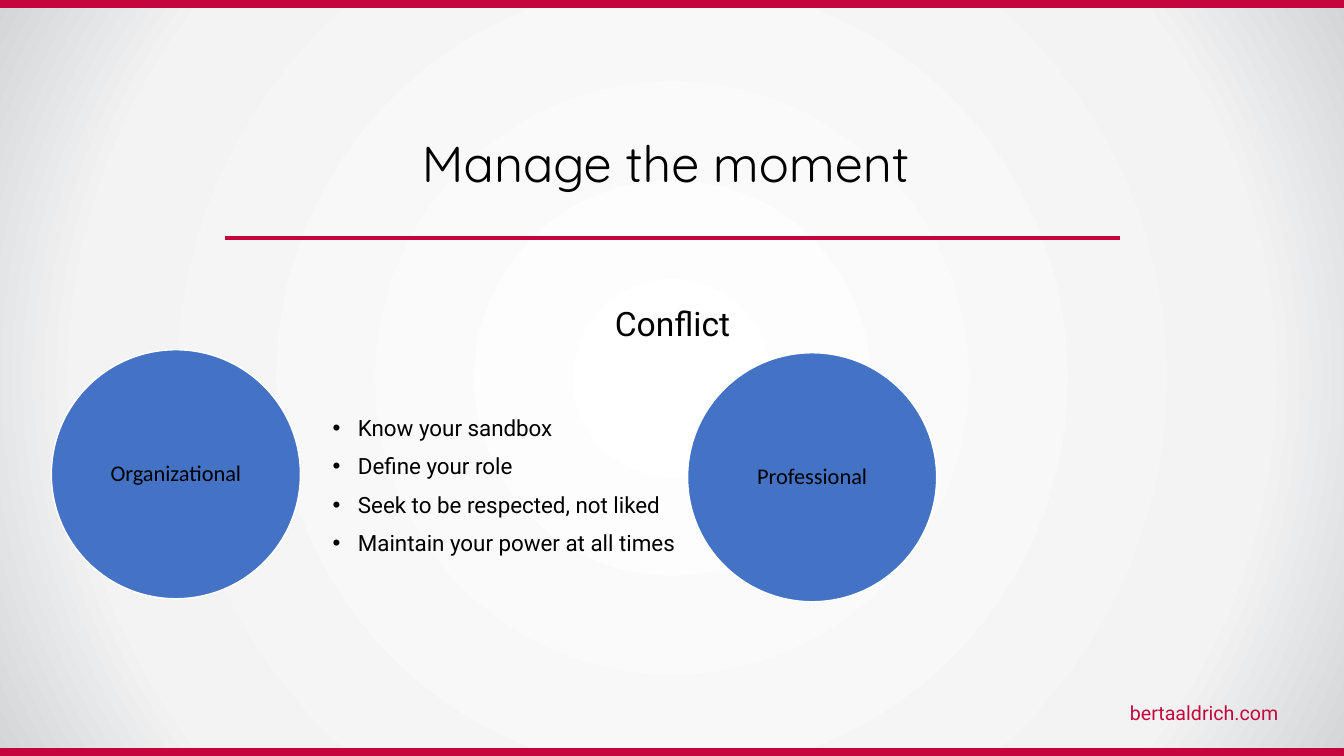
"""Build the "Manage the moment" slide."""
from lxml.etree import SubElement
from pptx import Presentation
from pptx.dml.color import RGBColor
from pptx.enum.shapes import MSO_CONNECTOR, MSO_SHAPE
from pptx.enum.text import MSO_ANCHOR, MSO_AUTO_SIZE, PP_ALIGN
from pptx.oxml import parse_xml
from pptx.oxml.ns import nsdecls, qn
from pptx.util import Inches, Pt

COLORS = {
    "crimson": "C5053D",
    "blue": "4472C4",
    "black": "000000",
    "white": "FFFFFF",
    "mist": "F3F3F4",
    "gray": "D3D5D7",
}
WIDTH, HEIGHT = 13.33, 7.5
BAR_HEIGHT = 0.07
DIAMETER = 2.47
ADVICE = [
    "Know your sandbox",
    "Define your role",
    "Seek to be respected, not liked",
    "Maintain your power at all times",
]


def color(name):
    return RGBColor.from_string(COLORS[name])


def set_background(page):
    stops = "".join(
        f'<a:gs pos="{position * 1000}"><a:srgbClr val="{COLORS[name]}"/></a:gs>'
        for position, name in ((0, "white"), (77, "mist"), (100, "gray"))
    )
    background = parse_xml(
        f'<p:bg {nsdecls("p", "a")}><p:bgPr><a:gradFill><a:gsLst>{stops}</a:gsLst>'
        '<a:path path="circle"><a:fillToRect l="50000" t="50000" r="50000" b="50000"/>'
        "</a:path></a:gradFill><a:effectLst/></p:bgPr></p:bg>"
    )
    page.element.cSld.insert(0, background)


def place(shape, left, top, width, height):
    bounds = {"left": left, "top": top, "width": width, "height": height}
    for name, value in bounds.items():
        setattr(shape, name, Inches(value))


def set_bullet(para, bullet):
    properties = para._p.get_or_add_pPr()
    indent = Inches(0.25) if bullet else 0
    properties.set("marL", str(indent))
    properties.set("indent", str(-indent))
    if bullet:
        SubElement(properties, qn("a:buFont")).set("typeface", "Arial")
        SubElement(properties, qn("a:buChar")).set("char", bullet)
    else:
        SubElement(properties, qn("a:buNone"))


def write(shape, lines, font, size, align, ink="black", bullet=None,
          anchor=MSO_ANCHOR.TOP, inset=0.1):
    frame = shape.text_frame
    frame_format = {
        "word_wrap": True,
        "auto_size": MSO_AUTO_SIZE.NONE,
        "vertical_anchor": anchor,
        "margin_left": Inches(inset),
        "margin_right": Inches(inset),
    }
    for name, value in frame_format.items():
        setattr(frame, name, value)
    for index, line in enumerate(lines):
        para = frame.paragraphs[0] if index == 0 else frame.add_paragraph()
        set_bullet(para, bullet)
        para_format = {
            "alignment": align,
            "line_spacing": 0.9,
            "space_before": Pt(10 if index else 0),
            "space_after": Pt(0),
        }
        for name, value in para_format.items():
            setattr(para, name, value)
        span = para.add_run()
        span.text = line
        for name, value in {"name": font, "size": Pt(size)}.items():
            setattr(span.font, name, value)
        span.font.color.rgb = color(ink)


def add_figure(page, kind, bounds, fill, line):
    shape = page.shapes.add_shape(kind, *map(Inches, bounds))
    shape.shadow.inherit = False
    shape.fill.solid()
    shape.fill.fore_color.rgb = color(fill)
    shape.line.color.rgb = color(line)
    shape.line.width = Pt(1)
    return shape


def add_circle(page, left, top, label):
    bounds = (left, top, DIAMETER, DIAMETER)
    circle = add_figure(page, MSO_SHAPE.OVAL, bounds, "blue", "white")
    write(circle, [label], "Calibri", 16, PP_ALIGN.CENTER,
          anchor=MSO_ANCHOR.MIDDLE, inset=0.14)


def add_rule(page, left, right, top):
    rule = page.shapes.add_connector(
        MSO_CONNECTOR.STRAIGHT, *map(Inches, (left, top, right, top))
    )
    rule.line.color.rgb = color("crimson")
    rule.line.width = Pt(3)
    SubElement(rule._element.spPr, qn("a:effectLst"))


def main():
    deck = Presentation()
    deck.slide_width, deck.slide_height = Inches(WIDTH), Inches(HEIGHT)
    page = deck.slides.add_slide(deck.slide_layouts[3])
    set_background(page)

    for top in (HEIGHT - BAR_HEIGHT, 0):
        add_figure(page, MSO_SHAPE.RECTANGLE, (0, top, WIDTH, BAR_HEIGHT),
                   "crimson", "crimson")

    title, topic, advice = page.placeholders
    place(title, 2.23, 1.35, 8.88, 0.59)
    write(title, ["Manage the moment "], "Quicksand", 36, PP_ALIGN.CENTER,
          anchor=MSO_ANCHOR.MIDDLE)
    place(topic, 0.92, 3, 11.5, 3.13)
    write(topic, ["Conflict"], "Roboto", 24, PP_ALIGN.CENTER)
    place(advice, 3.2, 4.09, 7.23, 1.25)
    write(advice, ADVICE, "Roboto", 16, PP_ALIGN.LEFT, bullet="•")

    add_rule(page, 2.23, 11.11, 2.36)
    add_circle(page, 0.51, 3.47, "Organizational")
    add_circle(page, 6.82, 3.5, "Professional")

    website = page.shapes.add_textbox(*map(Inches, (9.5, 6.93, 3.28, 0.34)))
    write(website, ["bertaaldrich.com"], "Roboto", 14, PP_ALIGN.RIGHT, ink="crimson")
    deck.save("out.pptx")


if __name__ == "__main__":
    main()
